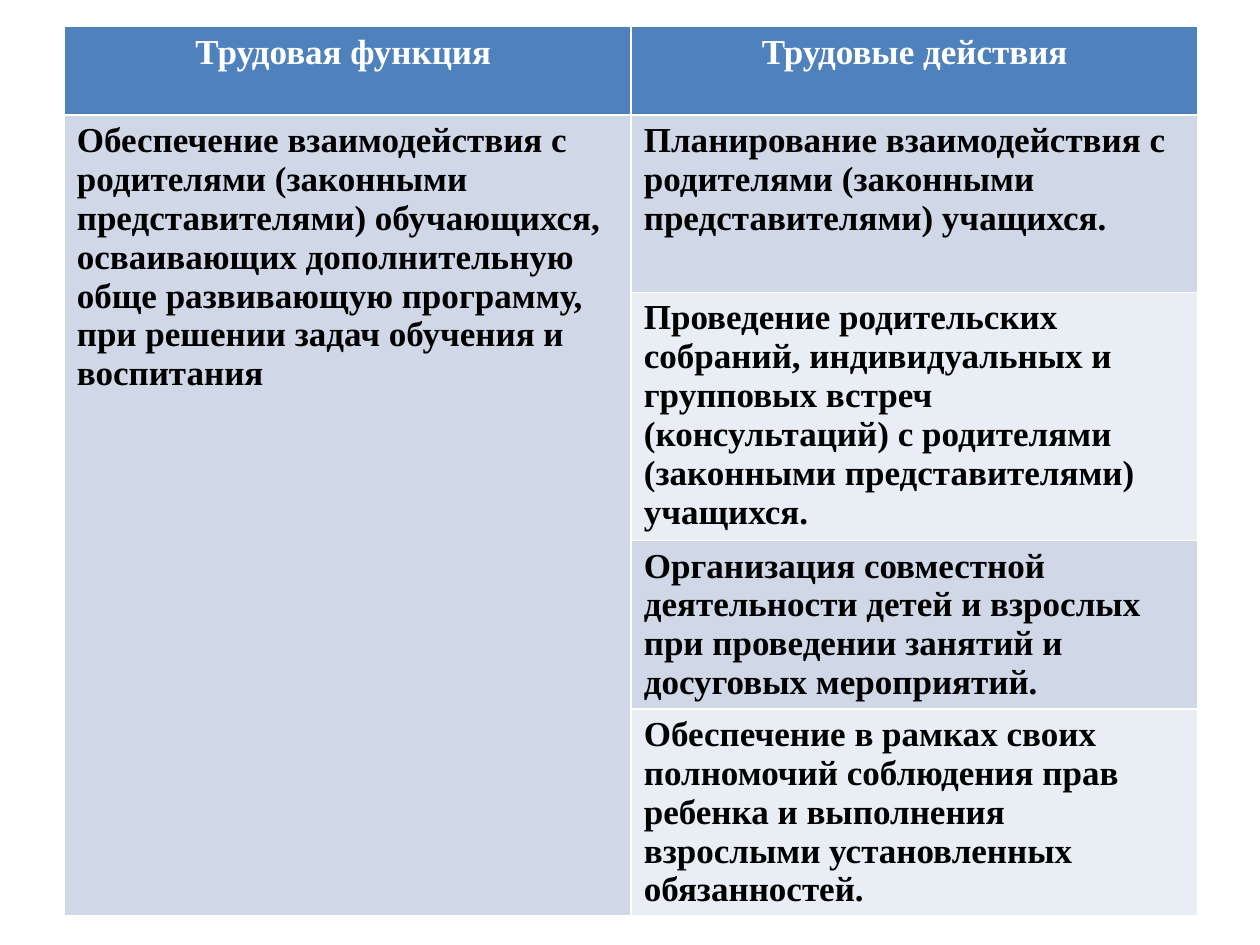
from pptx import Presentation
from pptx.dml.color import RGBColor
from pptx.enum.text import PP_ALIGN as Align
from pptx.util import Inches, Pt

WIDTH, HEIGHT = 10, 7.5
HEADINGS = ["Трудовая функция ", "Трудовые действия"]
FUNCTION = (
    "Обеспечение взаимодействия с родителями (законными представителями) "
    "обучающихся, осваивающих дополнительную обще развивающую программу, "
    "при решении задач обучения и воспитания"
)
ACTIONS = [
    "Планирование взаимодействия с родителями (законными представителями) учащихся.",
    "Проведение родительских собраний, индивидуальных и групповых встреч "
    "(консультаций) с родителями (законными представителями) учащихся.",
    "Организация совместной деятельности детей и взрослых при проведении "
    "занятий и досуговых мероприятий.",
    "Обеспечение в рамках своих полномочий соблюдения прав ребенка "
    "и выполнения взрослыми установленных обязанностей.",
]
ROW_SHARES = [0.1, 0.2, 0.28, 0.19, 0.23]
HEADER, BANDS = "4F81BD", ["D0D8E8", "E9EDF4"]


def color(value):
    return RGBColor.from_string(value)


def write(cell, text, *, fill, ink="000000", align=Align.LEFT, size=20):
    cell.fill.solid()
    cell.fill.fore_color.rgb = color(fill)
    paragraph = cell.text_frame.paragraphs[0]
    paragraph.alignment = align
    run = paragraph.add_run()
    run.text = text
    run.font.name = "Times New Roman"
    run.font.size = Pt(size)
    run.font.bold = True
    run.font.color.rgb = color(ink)


def add_duties(slide, left, top, width, height):
    box = [Inches(length) for length in (left, top, width, height)]
    duties = slide.shapes.add_table(len(ACTIONS) + 1, len(HEADINGS), *box).table
    for row, share in zip(duties.rows, ROW_SHARES):
        row.height = Inches(height * share)

    for column, heading in enumerate(HEADINGS):
        write(duties.cell(0, column), heading, fill=HEADER, ink="FFFFFF",
              align=Align.CENTER)

    function = duties.cell(1, 0)
    function.merge(duties.cell(len(ACTIONS), 0))
    write(function, FUNCTION, fill=BANDS[0])
    for index, action in enumerate(ACTIONS):
        write(duties.cell(index + 1, 1), action, fill=BANDS[index % 2])


def main():
    deck = Presentation()
    deck.slide_width, deck.slide_height = Inches(WIDTH), Inches(HEIGHT)
    slide = deck.slides.add_slide(deck.slide_layouts[6])
    add_duties(slide, 0.051 * WIDTH, 0.028 * HEIGHT, 0.9 * WIDTH, 0.938 * HEIGHT)
    deck.save("out.pptx")


if __name__ == "__main__":
    main()
